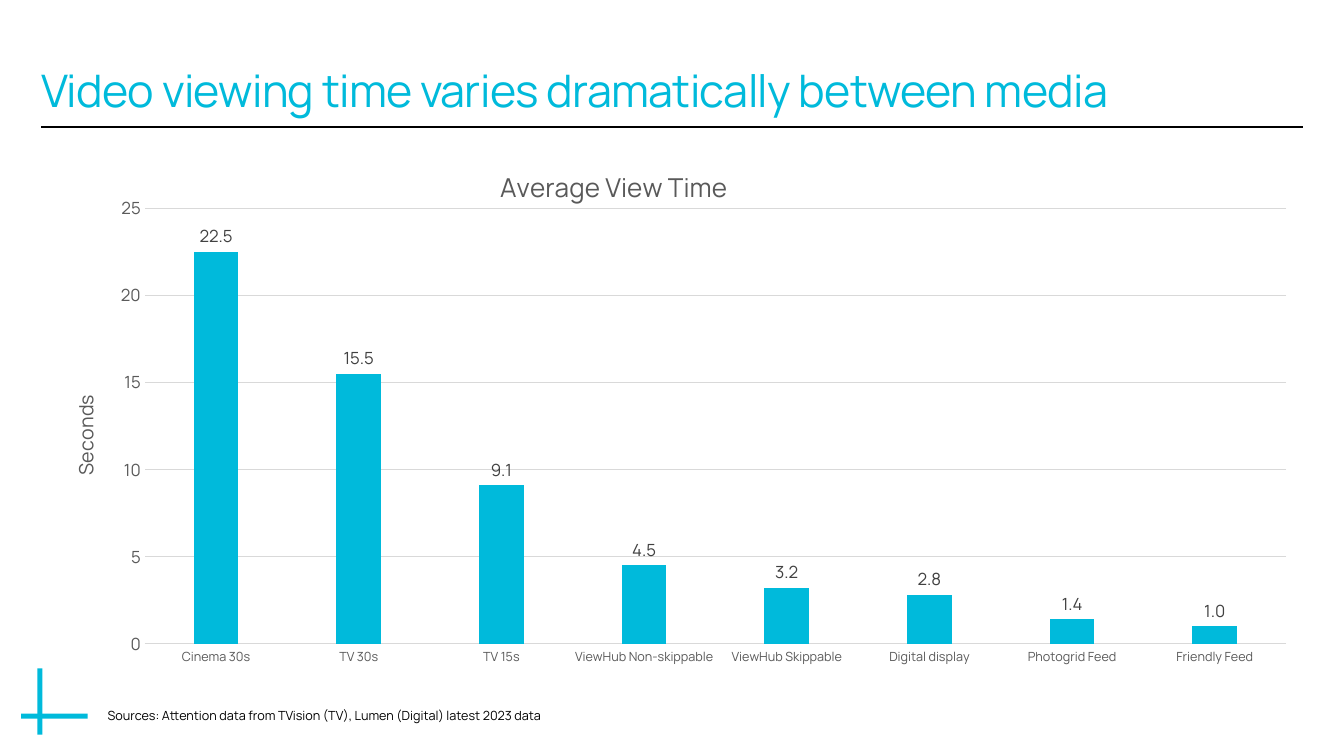
from lxml import etree
from pptx import Presentation
from pptx.chart.data import CategoryChartData as ChartData
from pptx.dml.color import RGBColor
from pptx.enum.chart import XL_CHART_TYPE as Kind, XL_LABEL_POSITION as Spot
from pptx.enum.chart import XL_TICK_MARK as Tick
from pptx.enum.shapes import MSO_CONNECTOR as Link, MSO_SHAPE as Shape
from pptx.enum.text import MSO_ANCHOR as Anchor
from pptx.oxml.ns import qn
from pptx.util import Inches, Pt

# Content
TITLE = "Video viewing time varies dramatically between media"
SOURCE = "Sources: Attention data from TVision (TV), Lumen (Digital) latest 2023 data"
NAME = "Average View Time"
UNIT = "Seconds"
TIMES = [
    ("Cinema 30s", 22.5),
    ("TV 30s", 15.5),
    ("TV 15s", 9.1),
    ("ViewHub Non-skippable", 4.5),
    ("ViewHub Skippable", 3.2),
    ("Digital display", 2.8),
    ("Photogrid Feed", 1.4),
    ("Friendly Feed", 1.0),
]

# Style and layout, in inches
FACE = "Manrope"
CYAN, BLACK, GREY, DARK, PALE = "00BADB", "000000", "595959", "404040", "D9D9D9"
LEFT, WIDE = 0.41, 12.51
TOP, HIGH = 1.16, 5.55
CROSS = [(0.37, 6.63, 0.05, 0.66), (0.21, 7.08, 0.66, 0.05)]


def color(code):
    return RGBColor.from_string(code)


def style(font, size, code):
    font.name, font.size, font.bold = FACE, Pt(size), False
    font.color.rgb = color(code)


def stroke(line, code, width):
    line.color.rgb = color(code)
    line.width = Pt(width)


def add_text(slide, text, box, size, code, inset=(0.1, 0.05),
             anchor=Anchor.TOP, space=1, track=0):
    frame = slide.shapes.add_textbox(*map(Inches, box)).text_frame
    frame.word_wrap = True
    frame.vertical_anchor = anchor
    frame.margin_left = frame.margin_right = Inches(inset[0])
    frame.margin_top = frame.margin_bottom = Inches(inset[1])
    para = frame.paragraphs[0]
    para.line_spacing = space
    run = para.add_run()
    run.text = text
    style(run.font, size, code)
    if track:
        run.font._element.set("spc", str(int(track * 100)))


def place(parent, index, **spots):
    """Give a chart part a manual layout, as fractions of the chart."""
    for old in parent.findall(qn("c:layout")):
        parent.remove(old)
    layout = etree.Element(qn("c:layout"))
    manual = etree.SubElement(layout, qn("c:manualLayout"))
    if "w" in spots:
        etree.SubElement(manual, qn("c:layoutTarget")).set("val", "inner")
    for mode in ("xMode", "yMode"):
        etree.SubElement(manual, qn("c:" + mode)).set("val", "edge")
    for key, value in spots.items():
        etree.SubElement(manual, qn("c:" + key)).set("val", str(value))
    parent.insert(index, layout)


def name_part(part, text, size, **spots):
    title = part.chart_title if hasattr(part, "chart_title") else part.axis_title
    title.text_frame.text = text
    style(title.text_frame.paragraphs[0].runs[0].font, size, GREY)
    place(title._element, 1, **spots)


def add_bars(slide):
    data = ChartData(number_format="0.0")
    data.categories = [name for name, _ in TIMES]
    data.add_series(NAME, [time for _, time in TIMES])
    box = map(Inches, (LEFT, TOP, WIDE, HIGH))
    chart = slide.shapes.add_chart(Kind.COLUMN_CLUSTERED, *box, data).chart
    style(chart.font, 10, BLACK)
    chart.has_legend = False
    name_part(chart, NAME, 18.6, x=0.36, y=0.08)
    area = chart._chartSpace.chart.plotArea
    place(area, 0, x=0.082, y=0.164, w=0.905, h=0.778)

    # Axes
    cats, vals = chart.category_axis, chart.value_axis
    for axis, size in ((cats, 9), (vals, 12)):
        axis.major_tick_mark = axis.minor_tick_mark = Tick.NONE
        style(axis.tick_labels.font, size, GREY)
    stroke(cats.format.line, PALE, 0.75)
    vals.format.line.fill.background()
    stroke(vals.major_gridlines.format.line, PALE, 0.75)
    vals.minimum_scale, vals.maximum_scale, vals.major_unit = 0, 25, 5
    vals.tick_labels.number_format = "0"
    vals.tick_labels.number_format_is_linked = False
    name_part(vals, UNIT, 14, x=0.02, y=0.49)

    # Bars and labels
    plot = chart.plots[0]
    plot.gap_width, plot.overlap = 219, -27
    plot.vary_by_categories = False
    bars = plot.series[0]
    bars.format.fill.solid()
    bars.format.fill.fore_color.rgb = color(CYAN)
    labels = bars.data_labels
    labels.show_value = True
    labels.position = Spot.OUTSIDE_END
    labels.number_format, labels.number_format_is_linked = "0.0", False
    style(labels.font, 12, DARK)


def main():
    deck = Presentation()
    deck.slide_width, deck.slide_height = Inches(13.33), Inches(7.5)
    slide = deck.slides.add_slide(deck.slide_layouts[6])

    # Rule under the title
    ends = map(Inches, (LEFT, 1.26, LEFT + WIDE, 1.26))
    rule = slide.shapes.add_connector(Link.STRAIGHT, *ends)
    stroke(rule.line, BLACK, 1)
    etree.SubElement(rule._element.spPr, qn("a:effectLst"))

    # Corner cross
    for box in CROSS:
        bar = slide.shapes.add_shape(Shape.RECTANGLE, *map(Inches, box))
        bar.shadow.inherit = False
        bar.fill.solid()
        bar.fill.fore_color.rgb = color(CYAN)
        bar.line.fill.background()

    # Words and chart
    add_text(slide, SOURCE, (0.97, 6.97, 6.67, 0.25), 9, BLACK)
    add_text(slide, TITLE, (LEFT, 0.11, WIDE, 1.05), 32, CYAN, inset=(0, 0),
             anchor=Anchor.BOTTOM, space=0.9, track=-0.5)
    add_bars(slide)
    deck.save("out.pptx")


if __name__ == "__main__":
    main()
